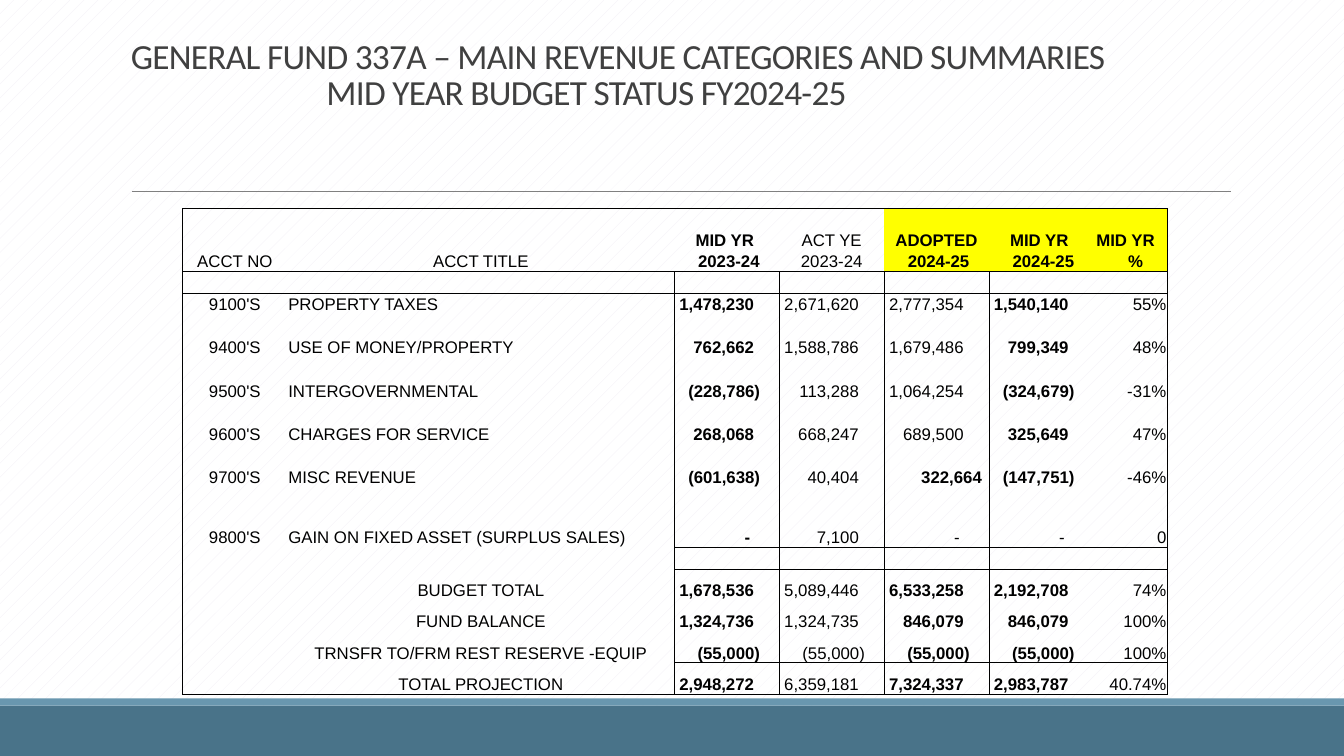
"""Build the General Fund 337A mid-year revenue slide."""
from dataclasses import dataclass

from lxml.etree import SubElement
from pptx import Presentation
from pptx.dml.color import RGBColor as Rgb
from pptx.enum.dml import MSO_PATTERN as Pattern
from pptx.enum.shapes import MSO_CONNECTOR as Connector, MSO_SHAPE as Shape
from pptx.enum.text import MSO_ANCHOR as Anchor, PP_ALIGN as Align
from pptx.oxml.ns import qn
from pptx.util import Inches, Pt

COLORS = {
    "band": "497389", "stripe": "6997AF", "rule": "808080", "title": "404040",
    "text": "000000", "header": "FFFF00", "pattern": "F1EDF5", "paper": "FFFFFF",
}
PLAIN_STYLE = "{2D5ABB26-0587-4C30-8999-92F81FD0307C}"
COLUMN_WIDTHS = (1.04, 3.84, 1.04, 1.04, 1.04, 1.04, 0.73)
TABLE_HEIGHT = 4.43
TALL_ROWS = {0: 0.41, 13: 0.39}
ROW_COUNT = 19
ROW_HEIGHT = (TABLE_HEIGHT - sum(TALL_ROWS.values())) / (ROW_COUNT - len(TALL_ROWS))
HEADER_ROWS = 2
HEADER_EDGES = (0, HEADER_ROWS, ROW_COUNT)
SUBTOTAL_EDGES = (14, 18)
OUTER_EDGES = (0, len(COLUMN_WIDTHS))
GROUP_EDGES = (2, 4)
FIRST_AMOUNT, FIRST_YELLOW = 2, 4


@dataclass(frozen=True)
class Band:
    top: float
    height: float
    color: str


@dataclass(frozen=True)
class Heading:
    upper: str
    lower: str
    bold: bool = True
    upper_shift: float = 0
    lower_shift: float = 0


@dataclass(frozen=True)
class Entry:
    row: int
    account: str
    title: str
    amounts: tuple[str, ...]
    percent: str
    bold: tuple[bool, ...] = (True, False, False, True)


BANDS = (Band(7, 0.5, "band"), Band(6.93, 0.07, "stripe"))
HEADINGS = (
    Heading("MID YR", "2023-24", True, -0.02, 0.02),
    Heading("ACT YE", "2023-24", False),
    Heading("ADOPTED", "2024-25", True, 0, 0.02),
    Heading("MID YR", "2024-25", True, -0.02, 0.02),
    Heading("MID YR", "%", True, -0.05, 0.05),
)
SUMMARY_BOLD = (True, False, True, True)
ENTRIES = (
    Entry(3, "9100'S", "PROPERTY TAXES",
          ("1,478,230", "2,671,620", "2,777,354", "1,540,140"), "55%"),
    Entry(5, "9400'S", "USE OF MONEY/PROPERTY",
          ("762,662", "1,588,786", "1,679,486", "799,349"), "48%"),
    Entry(7, "9500'S", "INTERGOVERNMENTAL",
          ("(228,786)", "113,288", "1,064,254", "(324,679)"), "-31%"),
    Entry(9, "9600'S", "CHARGES FOR SERVICE",
          ("268,068", "668,247", "689,500", "325,649"), "47%"),
    Entry(11, "9700'S", "MISC REVENUE",
          ("(601,638)", "40,404", "322,664", "(147,751)"), "-46%", SUMMARY_BOLD),
    Entry(13, "9800'S", "GAIN ON FIXED ASSET (SURPLUS SALES)",
          ("-", "7,100", "-", "-"), "0", (True, False, False, False)),
    Entry(15, "", "BUDGET TOTAL",
          ("1,678,536", "5,089,446", "6,533,258", "2,192,708"), "74%", SUMMARY_BOLD),
    Entry(16, "", "FUND BALANCE",
          ("1,324,736", "1,324,735", "846,079", "846,079"), "100%", SUMMARY_BOLD),
    Entry(17, "", "TRNSFR TO/FRM REST RESERVE -EQUIP",
          ("(55,000)",) * 4, "100%", SUMMARY_BOLD),
    Entry(18, "", "TOTAL PROJECTION",
          ("2,948,272", "6,359,181", "7,324,337", "2,983,787"), "40.74%", SUMMARY_BOLD),
)


def color(name: str) -> Rgb:
    return Rgb.from_string(COLORS[name])


def draw_backdrop(page) -> None:
    fill = page.background.fill
    fill.patterned()
    fill.pattern = Pattern.PERCENT_5
    fill.fore_color.rgb, fill.back_color.rgb = color("pattern"), color("paper")
    for band in BANDS:
        bar = page.shapes.add_shape(Shape.RECTANGLE, 0, Inches(band.top),
                                    Inches(13.33), Inches(band.height))
        bar.shadow.inherit = False
        bar.fill.solid()
        bar.fill.fore_color.rgb = color(band.color)
        bar.line.fill.background()
    rule = page.shapes.add_connector(Connector.STRAIGHT, Inches(1.31), Inches(1.9),
                                     Inches(12.21), Inches(1.9))
    rule.line.color.rgb, rule.line.width = color("rule"), Pt(0.5)
    SubElement(rule._element.spPr, qn("a:effectLst"))


def draw_title(page) -> None:
    box = page.shapes.add_textbox(Inches(1.2), Inches(0.31), Inches(11), Inches(1.59))
    frame = box.text_frame
    frame.word_wrap, frame.margin_top = True, Inches(0.09)
    frame.text = ("GENERAL FUND 337A – MAIN REVENUE CATEGORIES AND SUMMARIES\n"
                  "MID YEAR BUDGET STATUS FY2024-25")
    for para, indent in zip(frame.paragraphs, (0, 1.94)):
        para.line_spacing = 0.85
        para._p.get_or_add_pPr().set("marL", str(Inches(indent)))
        span = para.runs[0]
        span.font.name, span.font.size = "Calibri", Pt(25.2)
        span.font.color.rgb = color("title")
        span._r.get_or_add_rPr().set("spc", "-50")


def write(cell, text: str, align: Align, bold: bool = False,
          left: float = 0.01, right: float = 0.01) -> None:
    cell.text = text
    cell.margin_left, cell.margin_right = Inches(left), Inches(right)
    para = cell.text_frame.paragraphs[0]
    para.alignment = align
    for span in para.runs:
        span.font.name, span.font.size, span.font.bold = "Arial", Pt(12), bold
        span.font.color.rgb = color("text")


def has_row_edge(edge: int, column: int) -> bool:
    return edge in HEADER_EDGES or (edge in SUBTOTAL_EDGES and column >= FIRST_AMOUNT)


def has_column_edge(edge: int, row: int) -> bool:
    return edge in OUTER_EDGES or (edge in GROUP_EDGES and row >= HEADER_ROWS)


def style_cell(cell, row: int, column: int) -> None:
    cell.vertical_anchor = Anchor.BOTTOM
    cell.margin_left = cell.margin_right = cell.margin_top = Inches(0.01)
    cell.margin_bottom = 0
    SubElement(cell.text_frame.paragraphs[0]._p, qn("a:endParaRPr"), sz="1200")
    edges = {"a:lnL": has_column_edge(column, row), "a:lnR": has_column_edge(column + 1, row),
             "a:lnT": has_row_edge(row, column), "a:lnB": has_row_edge(row + 1, column)}
    for tag, visible in edges.items():
        if visible:
            line = SubElement(cell._tc.get_or_add_tcPr(), qn(tag), w=str(Pt(0.5)))
            fill = SubElement(line, qn("a:solidFill"))
            SubElement(fill, qn("a:srgbClr"), val=COLORS["text"])
    if row < HEADER_ROWS and column >= FIRST_YELLOW:
        cell.fill.solid()
        cell.fill.fore_color.rgb = color("header")
    else:
        cell.fill.background()


def amount_inset(entry: Entry, amount: str) -> float:
    if amount == "322,664":
        return 0.07
    return 0.29 if amount == "-" else 0.19 if amount.endswith(")") else 0.25


def draw_table(page) -> None:
    frame = page.shapes.add_table(ROW_COUNT, len(COLUMN_WIDTHS), Inches(1.81), Inches(2.07),
                                  Inches(sum(COLUMN_WIDTHS)), Inches(TABLE_HEIGHT))
    table = frame.table
    table.first_row = table.horz_banding = False
    table._tbl.tblPr.find(qn("a:tableStyleId")).text = PLAIN_STYLE
    for column, width in enumerate(COLUMN_WIDTHS):
        table.columns[column].width = Inches(width)
    for row in range(ROW_COUNT):
        table.rows[row].height = Inches(TALL_ROWS.get(row, ROW_HEIGHT))
        for column in range(len(COLUMN_WIDTHS)):
            style_cell(table.cell(row, column), row, column)
    for column, label in enumerate(("ACCT NO", "ACCT TITLE")):
        table.cell(0, column).merge(table.cell(1, column))
        write(table.cell(0, column), label, Align.CENTER)
    for column, heading in enumerate(HEADINGS, FIRST_AMOUNT):
        lines = ((heading.upper, heading.upper_shift), (heading.lower, heading.lower_shift))
        for row, (label, shift) in enumerate(lines):
            write(table.cell(row, column), label, Align.CENTER, heading.bold,
                  0.01 + max(2 * shift, 0), 0.01 + max(-2 * shift, 0))
    for entry in ENTRIES:
        write(table.cell(entry.row, 0), entry.account, Align.CENTER)
        write(table.cell(entry.row, 1), entry.title,
              Align.LEFT if entry.account else Align.CENTER)
        for column, (amount, bold) in enumerate(zip(entry.amounts, entry.bold), FIRST_AMOUNT):
            write(table.cell(entry.row, column), amount, Align.RIGHT, bold,
                  right=amount_inset(entry, amount))
        write(table.cell(entry.row, 6), entry.percent, Align.RIGHT)


def main() -> None:
    deck = Presentation()
    deck.slide_width, deck.slide_height = Inches(13.33), Inches(7.5)
    page = deck.slides.add_slide(deck.slide_layouts[6])
    draw_backdrop(page)
    draw_title(page)
    draw_table(page)
    deck.save("out.pptx")


if __name__ == "__main__":
    main()
